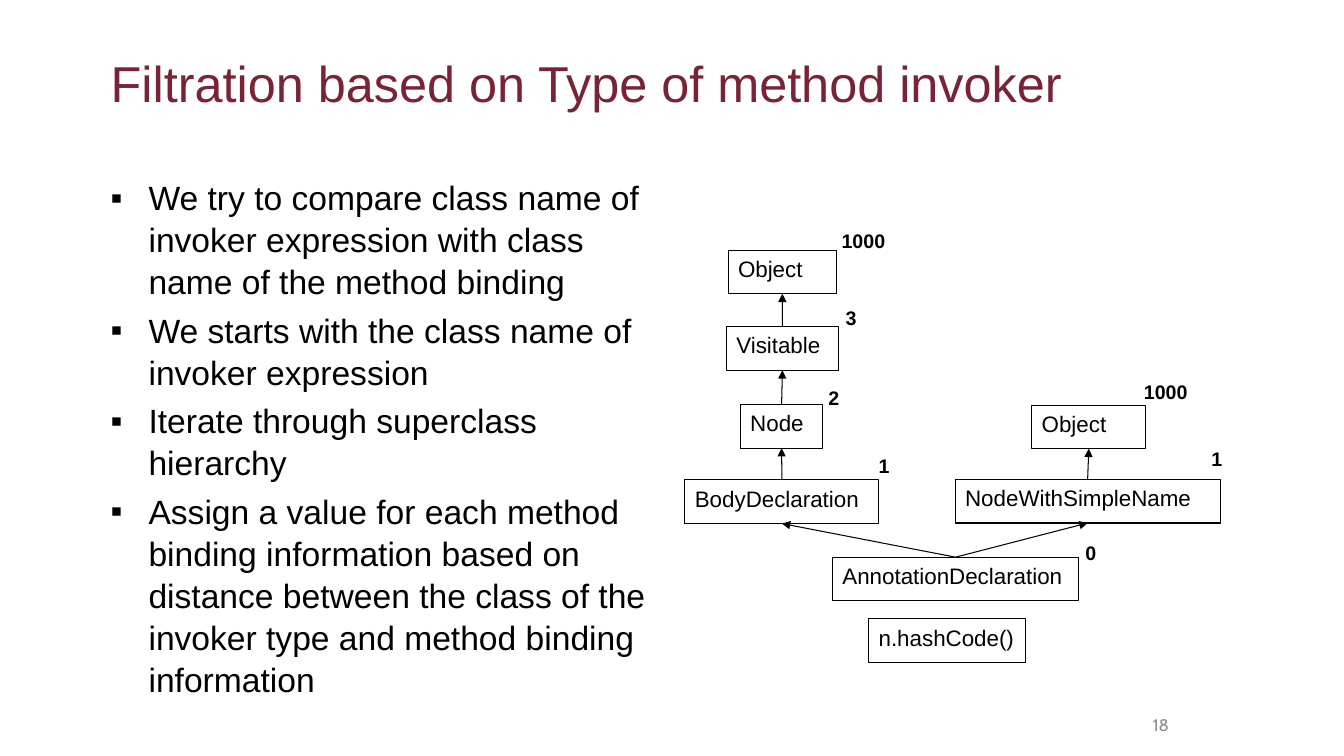
"""Builds the slide on filtering method bindings by the type of the method invoker."""
from lxml import etree
from pptx import Presentation
from pptx.dml.color import RGBColor
from pptx.enum.shapes import MSO_CONNECTOR, MSO_SHAPE
from pptx.enum.text import MSO_ANCHOR, PP_ALIGN
from pptx.oxml.ns import qn
from pptx.util import Pt

RECTANGLE = MSO_SHAPE.RECTANGLE
STRAIGHT = MSO_CONNECTOR.STRAIGHT
TOP, MIDDLE = MSO_ANCHOR.TOP, MSO_ANCHOR.MIDDLE
LEFT, RIGHT = PP_ALIGN.LEFT, PP_ALIGN.RIGHT
TOP_SIDE, BOTTOM_SIDE = 0, 2
COLORS = {"title": "782336", "ink": "000000", "paper": "FFFFFF", "number": "8C8C8C"}


class HierarchySlide:
    def __init__(self, slide, font="Arial"):
        self.shapes = slide.shapes
        self.font = font

    def color(self, key):
        return RGBColor.from_string(COLORS[key])

    def frame(self, shape, anchor=TOP):
        frame = shape.text_frame
        frame.word_wrap = True
        frame.vertical_anchor = anchor
        frame.margin_right = 0
        return frame

    def run(self, paragraph, text, size, color="ink", bold=False, align=LEFT, font=None):
        paragraph.alignment = align
        run = paragraph.add_run()
        run.text = text
        run.font.name = font or self.font
        run.font.size = Pt(size)
        run.font.bold = bold
        run.font.color.rgb = self.color(color)

    def text(self, area, text, size, anchor=TOP, **style):
        label = self.shapes.add_textbox(*map(Pt, area))
        self.run(self.frame(label, anchor).paragraphs[0], text, size, **style)

    def bullets(self, area, items, size, indent):
        frame = self.frame(self.shapes.add_textbox(*map(Pt, area)))
        for index, item in enumerate(items):
            paragraph = frame.add_paragraph() if index else frame.paragraphs[0]
            paragraph.line_spacing = 1.04
            paragraph.space_before = Pt(size * 0.2 if index else 0)
            properties = paragraph._p.get_or_add_pPr()
            properties.set("marL", str(Pt(indent)))
            properties.set("indent", str(-Pt(indent)))
            etree.SubElement(properties, qn("a:buFont")).set("typeface", self.font)
            etree.SubElement(properties, qn("a:buChar")).set("char", "▪")
            self.run(paragraph, item, size)

    def class_box(self, left, top, width, name):
        box = self.shapes.add_shape(RECTANGLE, Pt(left), Pt(top), Pt(width), Pt(31.2))
        box.shadow.inherit = False
        box.fill.solid()
        box.fill.fore_color.rgb = self.color("paper")
        box.line.color.rgb = self.color("ink")
        box.line.width = Pt(0.75)
        self.run(self.frame(box).paragraphs[0], name, 16)
        return box

    def inherits(self, subclass, superclass):
        arrow = self.shapes.add_connector(STRAIGHT, 0, 0, 0, 0)
        arrow.begin_connect(subclass, TOP_SIDE)
        arrow.end_connect(superclass, BOTTOM_SIDE)
        arrow.line.color.rgb = self.color("ink")
        arrow.line.width = Pt(0.75)
        etree.SubElement(arrow.line._get_or_add_ln(), qn("a:tailEnd")).set("type", "triangle")
        etree.SubElement(arrow._element.spPr, qn("a:effectLst"))


def main():
    deck = Presentation()
    deck.slide_width, deck.slide_height = Pt(960), Pt(540)
    page = HierarchySlide(deck.slides.add_slide(deck.slide_layouts[6]))

    page.text((72, 33.5, 816, 72), "Filtration based on Type of method invoker", 36,
              color="title")
    page.bullets((72, 122, 397, 385), [
        "We try to compare class name of invoker expression with class name of the method binding",
        "We starts with the class name of invoker expression",
        "Iterate through superclass hierarchy",
        "Assign a value for each method binding information based on distance between "
        "the class of the invoker type and method binding information",
    ], 24, 27)

    annotation = page.class_box(594.7, 398, 175.7, "AnnotationDeclaration")
    body = page.class_box(489.3, 342.8, 138.5, "BodyDeclaration")
    simple_name = page.class_box(682.3, 342.4, 189.2, "NodeWithSimpleName")
    node = page.class_box(528.8, 288.9, 59, "Node")
    visitable = page.class_box(518.9, 233.3, 80, "Visitable")
    node_root = page.class_box(520.1, 178.6, 77.5, "Object")
    name_root = page.class_box(737, 289.3, 81.5, "Object")
    page.class_box(620.5, 442, 112, "n.hashCode()")

    for chain in ((annotation, body, node, visitable, node_root),
                  (annotation, simple_name, name_root)):
        for subclass, superclass in zip(chain, chain[1:]):
            page.inherits(subclass, superclass)

    for left, top, distance in (
        (768.2, 383, "0"), (620.6, 321, "1"), (858.2, 315.5, "1"), (584.6, 272, "2"),
        (596.9, 214.8, "3"), (594, 160, "1000"), (810, 267.6, "1000"),
    ):
        width = 46.8 if len(distance) > 1 else 17.3
        page.text((left, top, width, 24.2), distance, 14, bold=True)

    page.text((619, 503.3, 216, 28.8), "18", 12, anchor=MIDDLE, color="number",
              align=RIGHT, font="Cabin")
    deck.save("out.pptx")


if __name__ == "__main__":
    main()
